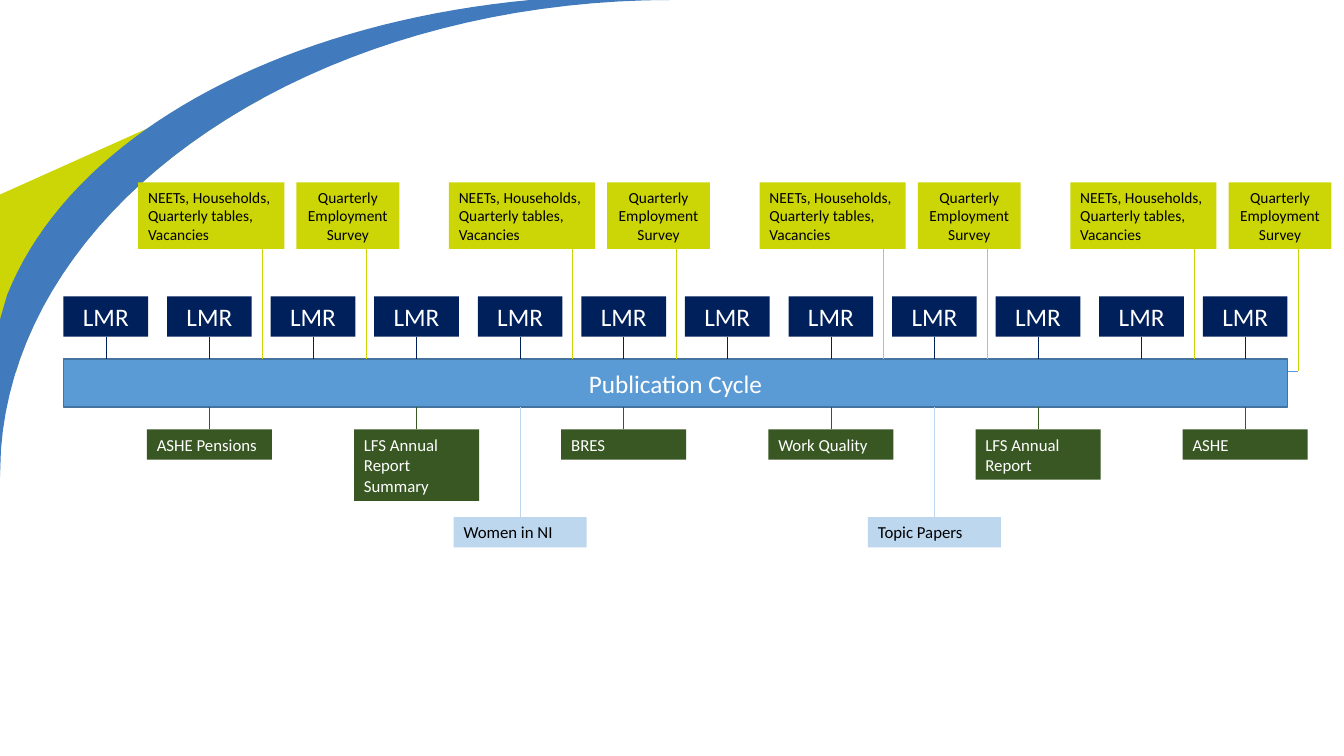
from lxml import etree
from pptx import Presentation
from pptx.dml.color import RGBColor
from pptx.enum.shapes import MSO_CONNECTOR, MSO_SHAPE
from pptx.enum.text import MSO_ANCHOR, PP_ALIGN
from pptx.oxml.ns import qn
from pptx.util import Inches, Pt

RECTANGLE = MSO_SHAPE.RECTANGLE
STRAIGHT = MSO_CONNECTOR.STRAIGHT
LEFT_ALIGN, CENTER = PP_ALIGN.LEFT, PP_ALIGN.CENTER
MIDDLE = MSO_ANCHOR.MIDDLE
TOP_SIDE, BOTTOM_SIDE = 0, 2

FONT = "Calibri"
WHITE, BLACK = "FFFFFF", "000000"
NAVY, LIME, GREEN, PALE = "00205B", "CCD607", "385723", "BDD7EE"
BAR_BLUE, BAR_EDGE, SWOOSH_BLUE = "5B9BD5", "43739E", "417ABD"

# Grid: twelve months across the bar, rows down the page (inches)
GRID_LEFT, GRID_RIGHT, MONTHS = 0.63, 12.77, 12
MONTH_WIDTH = 0.84
MONTH_STEP = (GRID_RIGHT - GRID_LEFT - MONTH_WIDTH) / (MONTHS - 1)
QUARTER_STEP = 3 * MONTH_STEP
QUARTERLY_ROW, MONTHLY_ROW, BAR_ROW, ANNUAL_ROW, TOPIC_ROW = 1.81, 2.94, 3.56, 4.26, 5.13
QUARTERLY_HEIGHT, MONTHLY_HEIGHT, BAR_HEIGHT = 0.66, 0.4, 0.48
BAR_BOTTOM = BAR_ROW + BAR_HEIGHT

# Quarterly releases: text, left, width, stem position, alignment
QUARTERLY = [
    ("NEETs, Households, Quarterly tables, Vacancies", 1.37, 1.45, 2.6, LEFT_ALIGN),
    ("Quarterly Employment Survey", 2.94, 1.02, 3.63, CENTER),
]
# Releases below the bar: month, text, height
ANNUAL = [
    (1, "ASHE Pensions", 0.3),
    (3, "LFS Annual Report Summary", 0.71),
    (5, "BRES", 0.3),
    (7, "Work Quality", 0.3),
    (9, "LFS Annual Report", 0.5),
    (11, "ASHE", 0.3),
]
TOPICS = [(4, "Women in NI", 0.3), (8, "Topic Papers", 0.3)]


def colour(value):
    return RGBColor.from_string(value)


def month_centre(month):
    return GRID_LEFT + MONTH_WIDTH / 2 + month * MONTH_STEP


def curve(start, control_a, control_b, end, steps=40):
    """Points along a cubic curve, including both ends."""
    points = []
    for step in range(steps + 1):
        t = step / steps
        weights = ((1 - t) ** 3, 3 * t * (1 - t) ** 2, 3 * t * t * (1 - t), t ** 3)
        corners = (start, control_a, control_b, end)
        points.append(tuple(sum(w * c[axis] for w, c in zip(weights, corners))
                            for axis in (0, 1)))
    return points


def add_outline(page, points, fill):
    corners = [(Inches(x), Inches(y)) for x, y in points]
    builder = page.shapes.build_freeform(*corners[0])
    builder.add_line_segments(corners[1:], close=True)
    outline = builder.convert_to_shape()
    outline.shadow.inherit = False
    outline.fill.solid()
    outline.fill.fore_color.rgb = colour(fill)
    outline.line.fill.background()


def add_box(page, left, top, width, height, text, fill, size, font_colour, align=LEFT_ALIGN):
    box = page.shapes.add_shape(RECTANGLE, *map(Inches, (left, top, width, height)))
    box.shadow.inherit = False
    box.fill.solid()
    box.fill.fore_color.rgb = colour(fill)
    box.line.fill.background()
    frame = box.text_frame
    frame.word_wrap = True
    frame.vertical_anchor = MIDDLE
    frame.text = text
    para = frame.paragraphs[0]
    para.alignment = align
    para.font.name = FONT
    para.font.size = Pt(size)
    para.font.color.rgb = colour(font_colour)
    return box


def add_stem(page, start, end, line_colour, box=None, side=None):
    stem = page.shapes.add_connector(STRAIGHT, *map(Inches, (*start, *end)))
    if box is not None:
        stem.begin_connect(box, side)
    stem.line.color.rgb = colour(line_colour)
    stem.line.width = Pt(0.5)
    etree.SubElement(stem._element.spPr, qn("a:effectLst"))


def add_background(page):
    add_outline(page, [(0, 1.93), (2.52, 0.8), (2.6, 0.98)]
                + curve((2.54, 1.01), (1.4, 1.65), (0.56, 2.53), (0.2, 3.56))
                + [(0.16, 3.69), (0, 3.32)], LIME)
    add_outline(page, [(7.16, 0)]
                + curve((6.67, 0), (3.1, 0), (0.19, 1.98), (0.01, 4.46))
                + [(0, 4.74), (0, 3.17)]
                + curve((0.07, 2.93), (0.69, 1.37), (2.72, 0.24), (5.26, 0)), SWOOSH_BLUE)


def add_monthly(page):
    for month in range(MONTHS):
        centre = month_centre(month)
        box = add_box(page, centre - MONTH_WIDTH / 2, MONTHLY_ROW, MONTH_WIDTH,
                      MONTHLY_HEIGHT, "LMR", NAVY, 18, WHITE, CENTER)
        add_stem(page, (centre, MONTHLY_ROW + MONTHLY_HEIGHT), (centre, BAR_ROW),
                 NAVY, box, BOTTOM_SIDE)


def add_quarterly(page):
    box_bottom = QUARTERLY_ROW + QUARTERLY_HEIGHT
    for quarter in range(4):
        shift = quarter * QUARTER_STEP
        for text, left, width, stem, align in QUARTERLY:
            add_box(page, left + shift, QUARTERLY_ROW, width, QUARTERLY_HEIGHT,
                    text, LIME, 11, BLACK, align)
            stem_x = stem + shift
            past_bar = stem_x > GRID_RIGHT
            stem_end = BAR_ROW + BAR_HEIGHT / 4 if past_bar else BAR_ROW
            add_stem(page, (stem_x, box_bottom), (stem_x, stem_end), LIME)
            if past_bar:
                add_stem(page, (stem_x, stem_end), (GRID_RIGHT, stem_end), BAR_BLUE)


def add_releases_below(page, releases, top, width, fill, font_colour):
    for month, text, height in releases:
        centre = month_centre(month)
        box = add_box(page, centre - width / 2, top, width, height,
                      text, fill, 12, font_colour)
        add_stem(page, (centre, top), (centre, BAR_BOTTOM), fill, box, TOP_SIDE)


def main():
    deck = Presentation()
    deck.slide_width, deck.slide_height = Inches(13.33), Inches(7.5)
    page = deck.slides.add_slide(deck.slide_layouts[6])
    add_background(page)

    # Timeline bar
    bar = add_box(page, GRID_LEFT, BAR_ROW, GRID_RIGHT - GRID_LEFT, BAR_HEIGHT,
                  "Publication Cycle", BAR_BLUE, 18, WHITE, CENTER)
    bar.line.color.rgb = colour(BAR_EDGE)
    bar.line.width = Pt(1)

    # Releases above and below the bar
    add_monthly(page)
    add_quarterly(page)
    add_releases_below(page, ANNUAL, ANNUAL_ROW, 1.24, GREEN, WHITE)
    add_releases_below(page, TOPICS, TOPIC_ROW, 1.32, PALE, BLACK)
    deck.save("out.pptx")


if __name__ == "__main__":
    main()
